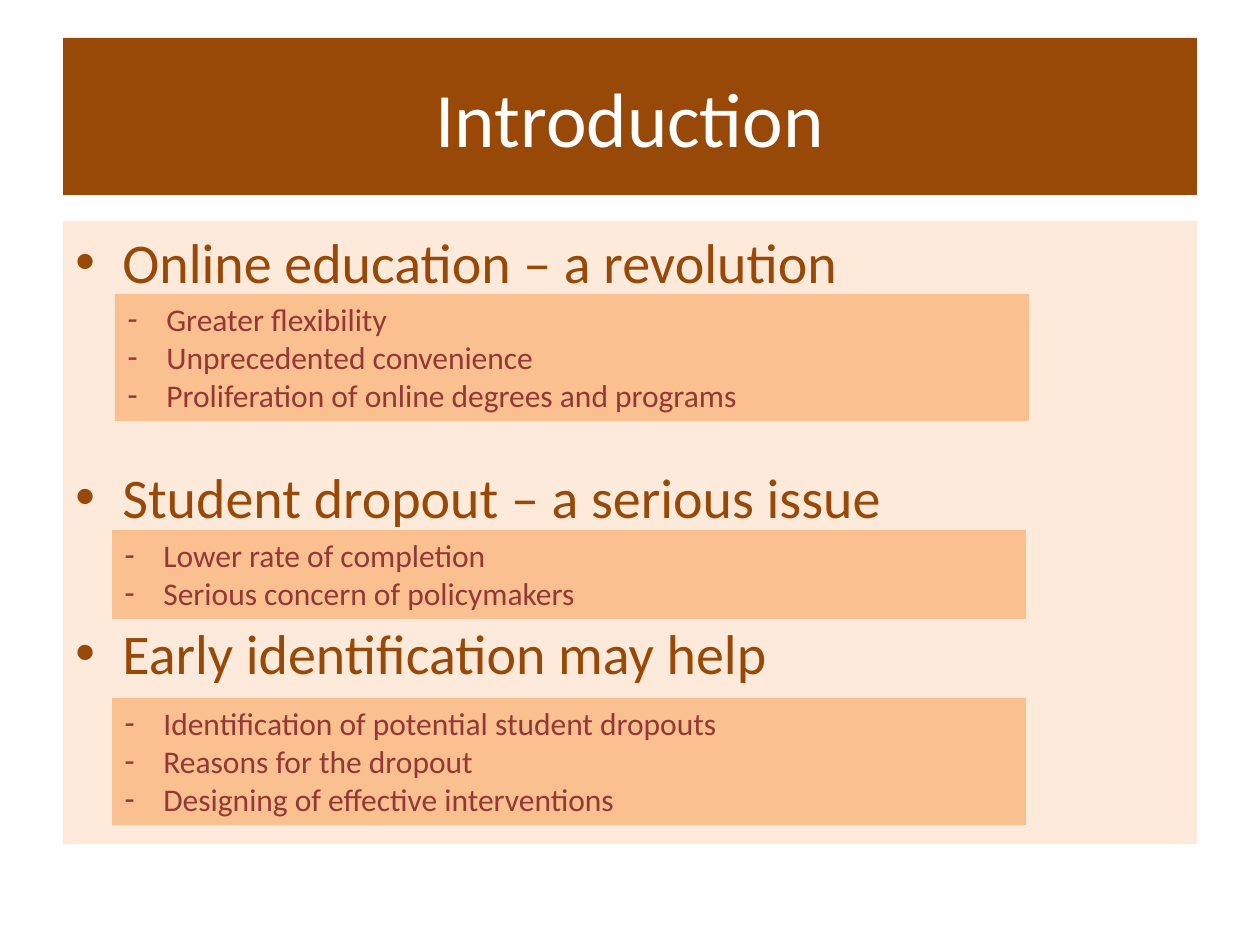
from pptx import Presentation
from pptx.dml.color import RGBColor
from pptx.enum.text import MSO_ANCHOR, MSO_AUTO_SIZE, PP_ALIGN
from pptx.oxml.ns import qn
from pptx.util import Emu, Pt
from lxml.etree import SubElement

PX_PER_INCH = 126
BROWN, CREAM, ORANGE, RED = "984807", "FDEADA", "FAC090", "953735"


def px(length):
    return Emu(round(length * 914400 / PX_PER_INCH))


def color(hex_string):
    return RGBColor.from_string(hex_string)


def paint(shape, hex_string):
    shape.fill.solid()
    shape.fill.fore_color.rgb = color(hex_string)


def write(paragraph, text, *, size, ink, align=PP_ALIGN.LEFT, before=0, bullet=None, indent=0):
    """Fill a paragraph; before is in points, indent is a hanging indent in px."""
    paragraph.alignment = align
    paragraph.space_before = Pt(before)
    if bullet:
        properties = paragraph._p.get_or_add_pPr()
        properties.set("marL", str(px(indent)))
        properties.set("indent", str(-px(indent)))
        SubElement(properties, qn("a:buFont"), typeface="Arial")
        SubElement(properties, qn("a:buChar"), char=bullet)
    run = paragraph.add_run()
    run.text = text
    run.font.name = "Calibri"
    run.font.size = Pt(size)
    run.font.color.rgb = color(ink)


class TopicSlide:
    def __init__(self, presentation):
        self.slide = presentation.slides.add_slide(presentation.slide_layouts[5])

    def title(self, text, left, top, width, height):
        heading = self.slide.shapes.title
        heading.left, heading.top = px(left), px(top)
        heading.width, heading.height = px(width), px(height)
        paint(heading, BROWN)
        heading.text_frame.vertical_anchor = MSO_ANCHOR.MIDDLE
        write(heading.text_frame.paragraphs[0], text, size=44, ink="FFFFFF", align=PP_ALIGN.CENTER)

    def bullets(self, items, left, top, width, height, *, fill, grow=False, **style):
        """Add a filled list; each item is a (text, points before) pair."""
        panel = self.slide.shapes.add_textbox(px(left), px(top), px(width), px(height))
        paint(panel, fill)
        frame = panel.text_frame
        frame.word_wrap = True
        frame.auto_size = MSO_AUTO_SIZE.SHAPE_TO_FIT_TEXT if grow else MSO_AUTO_SIZE.NONE
        for index, (text, before) in enumerate(items):
            paragraph = frame.add_paragraph() if index else frame.paragraphs[0]
            write(paragraph, text, before=before, **style)

    def topics(self, items, left, top, width, height):
        self.bullets(items, left, top, width, height, fill=CREAM,
                     size=32, ink=BROWN, bullet="•", indent=47)

    def details(self, lines, left, top):
        self.bullets([(line, 0) for line in lines], left, top, 914, 13 + 38 * len(lines),
                     fill=ORANGE, grow=True, size=18, ink=RED, bullet="-", indent=39)


def main():
    presentation = Presentation()
    presentation.slide_width, presentation.slide_height = px(1260), px(945)

    introduction = TopicSlide(presentation)
    introduction.title("Introduction", 63, 38, 1134, 157)
    introduction.topics([
        ("Online education – a revolution", 0),
        ("Student dropout – a serious issue", 96),
        ("Early identification may help", 51),
    ], 63, 221, 1134, 623)
    introduction.details([
        "Greater flexibility",
        "Unprecedented convenience",
        "Proliferation of online degrees and programs",
    ], 115, 294)
    introduction.details([
        "Lower rate of completion",
        "Serious concern of policymakers",
    ], 112, 530)
    introduction.details([
        "Identification of potential student dropouts",
        "Reasons for the dropout",
        "Designing of effective interventions",
    ], 112, 698)

    presentation.save("out.pptx")


if __name__ == "__main__":
    main()
